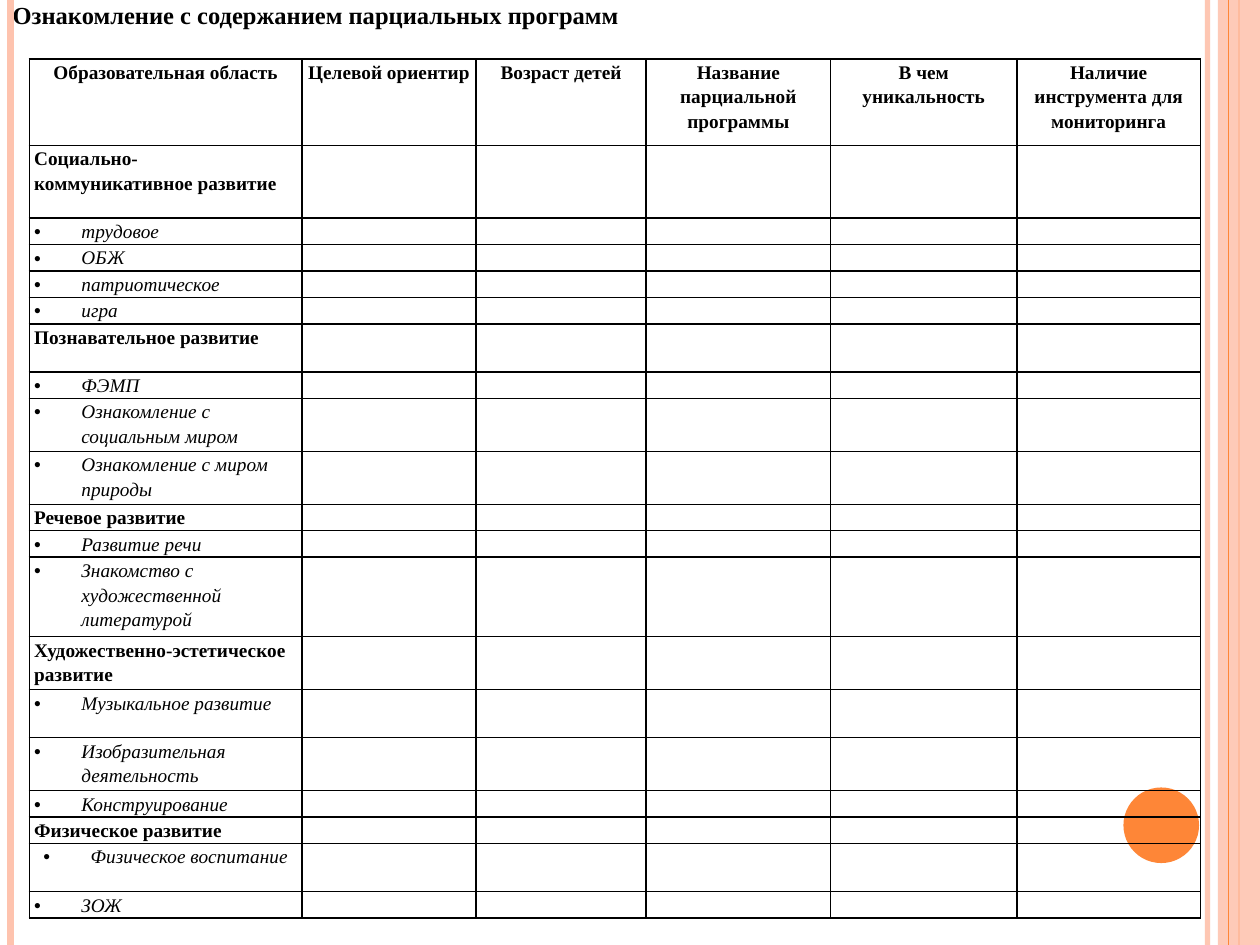
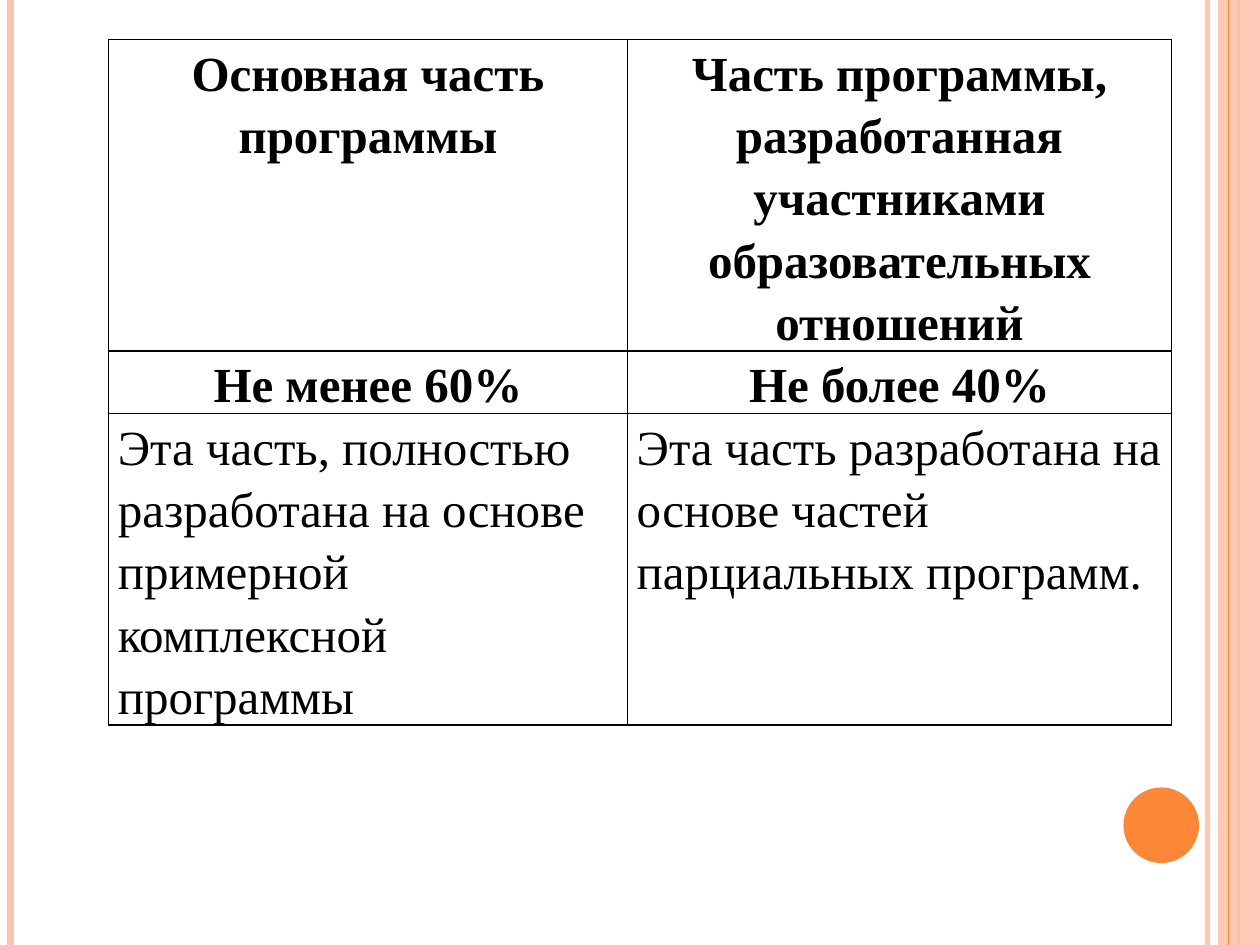
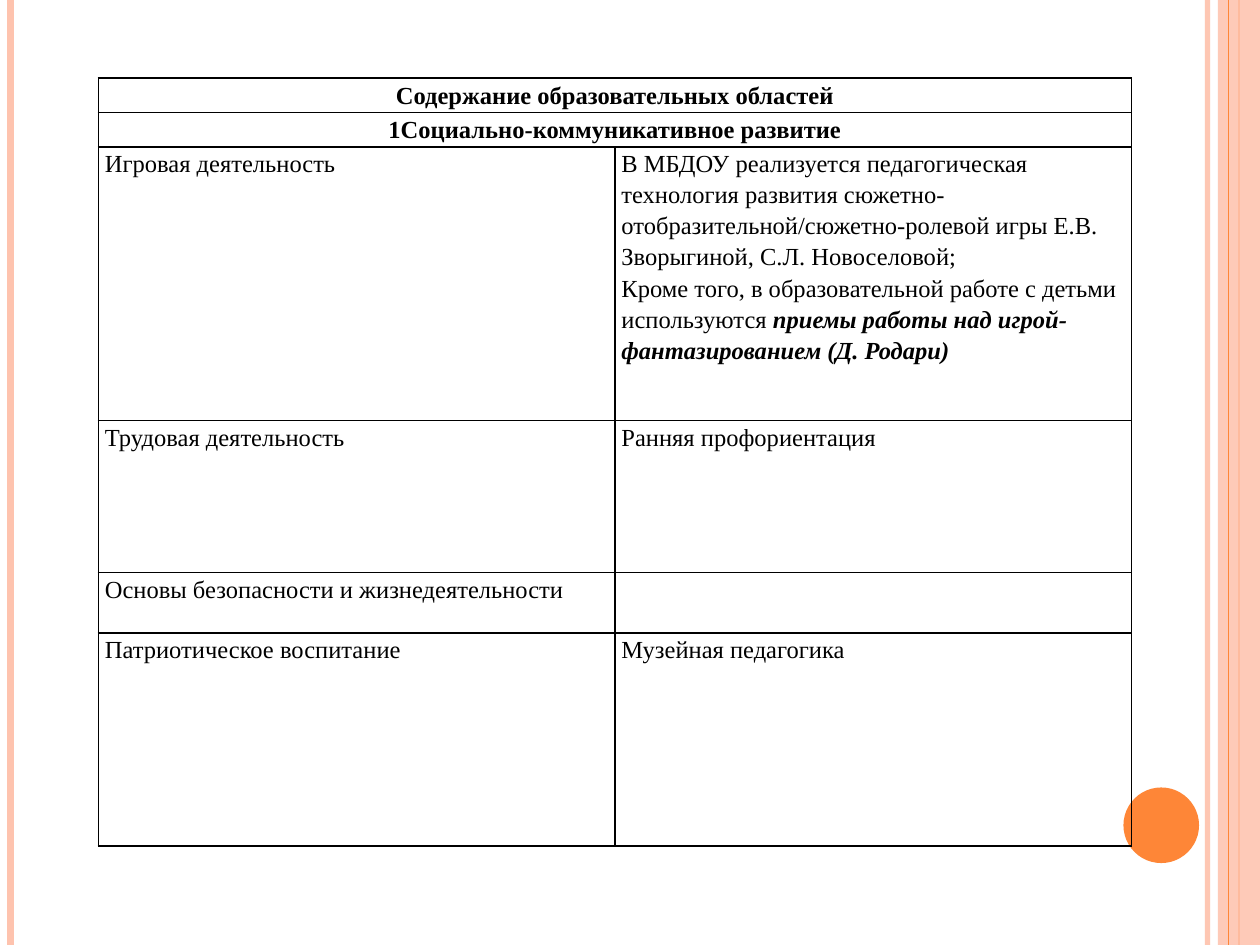
from lxml.etree import SubElement
from pptx import Presentation
from pptx.dml.color import RGBColor
from pptx.enum.shapes import MSO_CONNECTOR, MSO_SHAPE
from pptx.enum.text import MSO_ANCHOR, PP_ALIGN
from pptx.oxml.ns import qn
from pptx.util import Pt

BLACK = RGBColor(0x00, 0x00, 0x00)
ORANGE = RGBColor(0xFE, 0x86, 0x37)
PEACH = RGBColor(0xFE, 0xC3, 0xAE)
FONT = "Times New Roman"
WIDTH, HEIGHT = 720, 540
TITLE_ONLY, BLANK = 5, 6


class Deck:
    """Holds the shared style and the slide being built."""

    def __init__(self):
        self.presentation = Presentation()
        self.presentation.slide_width = Pt(WIDTH)
        self.presentation.slide_height = Pt(HEIGHT)
        self.slide = None

    def new_slide(self, layout):
        layouts = self.presentation.slide_layouts
        self.slide = self.presentation.slides.add_slide(layouts[layout])
        # Side stripes, right band and corner circle
        self.stripe(690, PEACH, 3, 93)
        self.stripe(6, PEACH, 4.5)
        self.stripe(708, ORANGE, 1.5)
        self.shape(MSO_SHAPE.RECTANGLE, 696, 0, 24, HEIGHT, PEACH, 87)
        self.stripe(702, ORANGE, 0.75)
        self.shape(MSO_SHAPE.OVAL, 642, 450, 43.2, 43.2, ORANGE)

    def set_opacity(self, element, percent):
        color = next(element.iter(qn("a:srgbClr")))
        SubElement(color, qn("a:alpha"), val=str(percent * 1000))

    def stripe(self, x, color, width, opacity=100):
        line = self.slide.shapes.add_connector(
            MSO_CONNECTOR.STRAIGHT, Pt(x), Pt(0), Pt(x), Pt(HEIGHT))
        line.line.color.rgb = color
        line.line.width = Pt(width)
        properties = line._element.spPr
        SubElement(properties, qn("a:effectLst"))
        if opacity < 100:
            self.set_opacity(properties, opacity)

    def shape(self, kind, left, top, width, height, color, opacity=100):
        shape = self.slide.shapes.add_shape(
            kind, Pt(left), Pt(top), Pt(width), Pt(height))
        shape.shadow.inherit = False
        shape.fill.solid()
        shape.fill.fore_color.rgb = color
        shape.line.fill.background()
        if opacity < 100:
            self.set_opacity(shape._element.spPr, opacity)

    def title(self, text):
        title = self.slide.shapes.title
        title.left, title.top, title.width, title.height = (
            Pt(0), Pt(0), Pt(WIDTH), Pt(36))
        frame = title.text_frame
        frame.text = text
        frame.word_wrap = True
        frame.vertical_anchor = MSO_ANCHOR.TOP
        frame.margin_top = frame.margin_bottom = Pt(0)
        paragraph = frame.paragraphs[0]
        paragraph.alignment = PP_ALIGN.LEFT
        self.format_run(paragraph.runs[0], 14, bold=True)

    def format_run(self, run, size, bold=False, italic=False):
        run.font.name = FONT
        run.font.size = Pt(size)
        run.font.bold = bold
        run.font.italic = italic
        run.font.color.rgb = BLACK

    def table(self, left, top, columns, rows, margin):
        shape = self.slide.shapes.add_table(
            len(rows), len(columns), Pt(left), Pt(top),
            Pt(sum(columns)), Pt(sum(rows)))
        table = shape.table
        table.first_row = table.horz_banding = False
        for column, width in zip(table.columns, columns):
            column.width = Pt(width)
        for row, height in zip(table.rows, rows):
            row.height = Pt(height)
            for cell in row.cells:
                cell.margin_left = cell.margin_right = Pt(margin)
                cell.margin_top = cell.margin_bottom = Pt(0)
                self.border(cell)
                cell.fill.background()
        return table

    def border(self, cell):
        properties = cell._tc.get_or_add_tcPr()
        for side in ("lnL", "lnR", "lnT", "lnB"):
            line = SubElement(properties, qn(f"a:{side}"), w=str(Pt(1)))
            fill = SubElement(line, qn("a:solidFill"))
            SubElement(fill, qn("a:srgbClr"), val=str(BLACK))

    def cell_text(self, cell, text, size, bold=False, italic=False,
                  centered=False, bullet=False):
        cell.text_frame.text = text
        for paragraph in cell.text_frame.paragraphs:
            paragraph.line_spacing = 1.15
            paragraph.alignment = PP_ALIGN.CENTER if centered else PP_ALIGN.LEFT
            if bullet:
                self.bullet(paragraph)
            for run in paragraph.runs:
                self.format_run(run, size, bold, italic)
            if not text:
                SubElement(paragraph._p, qn("a:endParaRPr"), sz=str(size * 100))

    def bullet(self, paragraph):
        properties = paragraph._p.get_or_add_pPr()
        properties.set("marL", str(Pt(27)))
        properties.set("indent", str(Pt(-27)))
        SubElement(properties, qn("a:buFont"), typeface="Arial")
        SubElement(properties, qn("a:buChar"), char="•")


# Row heights of the programme table, by number of text lines
ONE, TALL, TWO, THREE = 15.1, 27.5, 30.3, 45.5

PROGRAM_HEADERS = [
    "Образовательная область", "Целевой ориентир", "Возраст детей",
    "Название парциальной программы", "В чем уникальность",
    "Наличие инструмента для мониторинга",
]

# Area: (name, height, topics with their heights)
AREAS = [
    ("Социально- коммуникативное развитие", 41.5, [
        ("трудовое", ONE), ("ОБЖ", ONE), ("патриотическое", ONE), ("игра", ONE)]),
    ("Познавательное развитие", TALL, [
        ("ФЭМП", ONE), ("Ознакомление с социальным миром", TWO),
        ("Ознакомление с миром природы", TWO)]),
    ("Речевое развитие", ONE, [
        ("Развитие речи", ONE),
        ("Знакомство с художественной литературой", THREE)]),
    ("Художественно-эстетическое развитие", TWO, [
        ("Музыкальное развитие", TALL), ("Изобразительная деятельность", TWO),
        ("Конструирование", ONE)]),
    ("Физическое развитие", ONE, [
        ("Физическое воспитание", TALL), ("ЗОЖ", ONE)]),
]

PARTS = [
    ("Основная часть программы",
     "Часть программы, разработанная участниками образовательных отношений"),
    ("Не менее 60%", "Не более 40%"),
    ("Эта часть, полностью разработана на основе примерной комплексной программы",
     "Эта часть разработана на основе частей парциальных программ."),
]

CONTENT_HEADERS = ["Содержание образовательных областей",
                   "1Социально-коммуникативное развитие"]
CONTENT = [
    ("Игровая деятельность",
     "В МБДОУ реализуется педагогическая технология развития "
     "сюжетно-отобразительной/сюжетно-ролевой игры Е.В. Зворыгиной, "
     "С.Л. Новоселовой;\n"
     "Кроме того, в образовательной работе с детьми используются"),
    ("Трудовая деятельность", "Ранняя профориентация"),
    ("Основы безопасности и жизнедеятельности", ""),
    ("Патриотическое воспитание", "Музейная педагогика"),
]


def programs_slide(deck):
    deck.new_slide(TITLE_ONLY)
    deck.title("Ознакомление с содержанием парциальных программ")
    rows = []
    for area, height, topics in AREAS:
        rows.append((area, height, False))
        rows += [(topic, topic_height, True) for topic, topic_height in topics]
    table = deck.table(16.8, 33.7, [155.7, 99.6, 97.2, 105.4, 106.4, 105],
                       [49.5] + [height for _, height, _ in rows], 2.7)
    for column, header in enumerate(PROGRAM_HEADERS):
        deck.cell_text(table.cell(0, column), header, 11, bold=True, centered=True)
    for index, (name, _, is_topic) in enumerate(rows, start=1):
        deck.cell_text(table.cell(index, 0), name, 11, bold=not is_topic,
                       italic=is_topic, bullet=is_topic,
                       centered=name == "Физическое воспитание")
        for column in range(1, len(PROGRAM_HEADERS)):
            deck.cell_text(table.cell(index, column), "", 11)


def parts_slide(deck):
    deck.new_slide(BLANK)
    table = deck.table(62, 22.5, [296.5, 311], [178, 35.6, 178], 5.4)
    for row, texts in enumerate(PARTS):
        is_heading = row < 2
        for column, text in enumerate(texts):
            deck.cell_text(table.cell(row, column), text, 28,
                           bold=is_heading, centered=is_heading)


def content_slide(deck):
    deck.new_slide(BLANK)
    table = deck.table(56.2, 44.7, [295.2, 295.2],
                       [19.6, 19.6, 156.3, 86.9, 34.6, 121.7], 3.7)
    for row, header in enumerate(CONTENT_HEADERS):
        table.cell(row, 0).merge(table.cell(row, 1))
        deck.cell_text(table.cell(row, 0), header, 14, bold=True, centered=True)
    for row, texts in enumerate(CONTENT, start=len(CONTENT_HEADERS)):
        for column, text in enumerate(texts):
            deck.cell_text(table.cell(row, column), text, 14)
    # Emphasised ending of the play description
    ending = table.cell(2, 1).text_frame.paragraphs[-1].add_run()
    ending.text = " приемы работы над игрой-фантазированием (Д. Родари)"
    deck.format_run(ending, 14, bold=True, italic=True)


def main():
    deck = Deck()
    programs_slide(deck)
    parts_slide(deck)
    content_slide(deck)
    deck.presentation.save("out.pptx")


if __name__ == "__main__":
    main()
